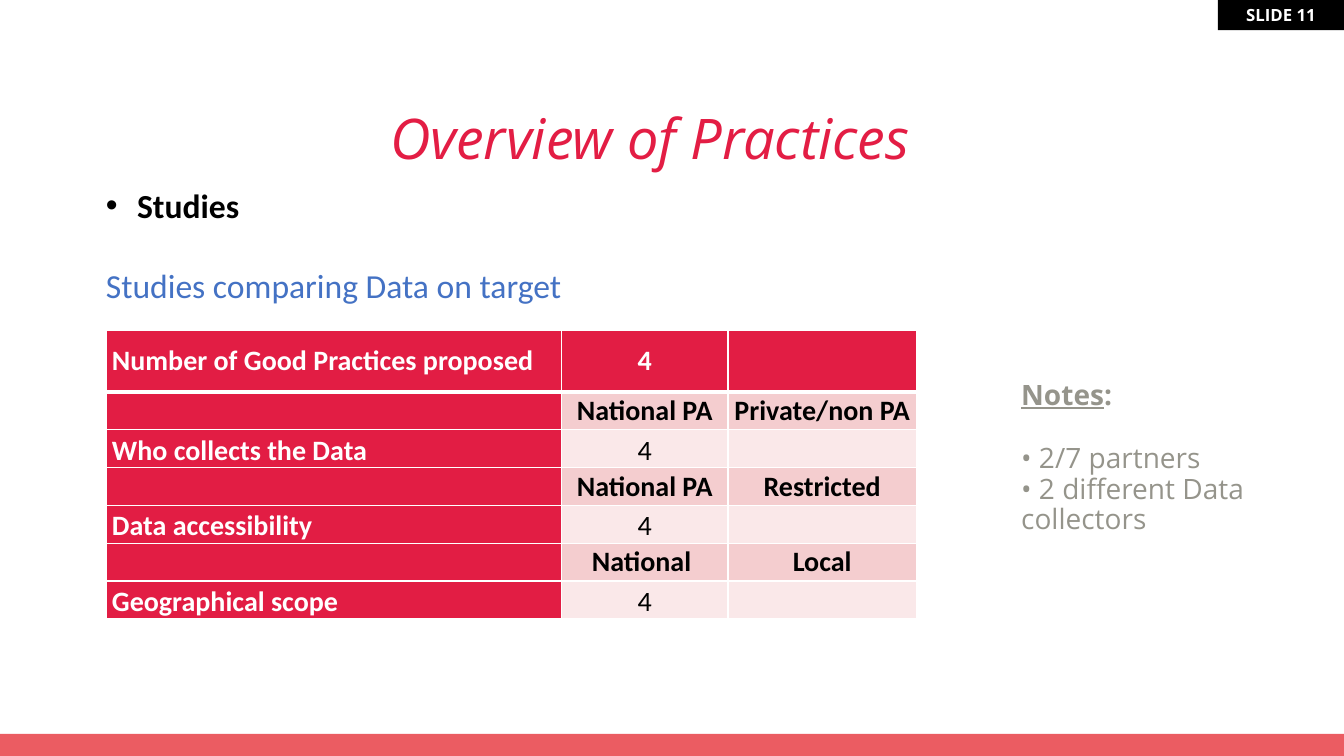
from lxml import etree
from pptx import Presentation
from pptx.dml.color import RGBColor
from pptx.enum.shapes import MSO_SHAPE
from pptx.enum.text import MSO_ANCHOR, MSO_AUTO_SIZE, PP_ALIGN
from pptx.oxml.ns import qn
from pptx.util import Inches, Pt

RECT = MSO_SHAPE.RECTANGLE
TOP, MID, LOW = MSO_ANCHOR.TOP, MSO_ANCHOR.MIDDLE, MSO_ANCHOR.BOTTOM
LEFT, CENTER = PP_ALIGN.LEFT, PP_ALIGN.CENTER
FIXED = MSO_AUTO_SIZE.NONE

COLORS = {"white": "FFFFFF", "black": "000000", "title": "E31D44",
          "red": "E21D44", "pink": "F4CDCF", "pale": "FAE8E9",
          "bar": "EB5C62", "blue": "4472C4", "gray": "95948B"}


def color(name):
    return RGBColor.from_string(COLORS[name])


def write(para, text, tint, align=LEFT, **form):
    run = para.add_run()
    run.text = text
    para.alignment = align
    run.font.color.rgb = color(tint)
    for key, value in form.items():
        setattr(run.font, key, value)


deck = Presentation()
deck.slide_width, deck.slide_height = Inches(13.33), Inches(7.5)
slide = deck.slides.add_slide(deck.slide_layouts[1])
shapes = slide.shapes

# Footer bar and slide number badge
bands = [((0, 7.28, 13.33, 0.22), "bar", ""),
         ((12.08, 0, 1.25, 0.3), "black", "SLIDE 11")]
for box, tint, text in bands:
    band = shapes.add_shape(RECT, *map(Inches, box))
    band.shadow.inherit = False
    band.fill.solid()
    band.fill.fore_color.rgb = color(tint)
    band.line.fill.background()
    if text:
        write(band.text_frame.paragraphs[0], text, "white", CENTER,
              name="Open Sans", size=Pt(12), bold=True)

# Text areas
title, body = shapes.title, slide.placeholders[1]
notes = shapes.add_textbox(0, 0, 0, 0)
areas = [(title, (0.95, 0.87, 10.99, 0.85), MID),
         (body, (0.95, 1.78, 10.34, 1.45), TOP),
         (notes, (10.03, 3.73, 2.89, 2.59), TOP)]
for area, box, anchor in areas:
    area.left, area.top, area.width, area.height = map(Inches, box)
    frame = area.text_frame
    frame.word_wrap = True
    frame.auto_size = FIXED
    frame.vertical_anchor = anchor

# Title
para = title.text_frame.paragraphs[0]
para.line_spacing = 1.2
write(para, "Overview of Practices", "title", CENTER,
      name="Open Sans", size=Pt(40), italic=True)

# Topic and table heading
topic = body.text_frame.paragraphs[0]
head = body.text_frame.add_paragraph()
for para, inset, mark in [(topic, 0.31, "•"), (head, 0, None)]:
    props = para._p.get_or_add_pPr()
    props.set("marL", str(Inches(inset)))
    props.set("indent", str(-Inches(inset)))
    if mark:
        etree.SubElement(props, qn("a:buChar"), char=mark)
    else:
        etree.SubElement(props, qn("a:buNone"))
topic.space_before = Pt(0)
head.space_before = Pt(29)
write(topic, "Studies", "black", name="Calibri", size=Pt(24), bold=True)
write(head, "Studies comparing Data on target", "blue",
      name="Calibri", size=Pt(24))

# Notes
gray = {"name": "Open Sans", "size": Pt(20)}
para = notes.text_frame.paragraphs[0]
para.line_spacing = 0.9
write(para, "Notes", "gray", bold=True, underline=True, **gray)
write(para, ":", "gray", bold=True, **gray)
for text, gap in [("• 2/7 partners", 24),
                  ("• 2 different Data collectors", 0)]:
    para = notes.text_frame.add_paragraph()
    para.line_spacing = 0.9
    para.space_before = Pt(gap)
    write(para, text, "gray", **gray)

# Practices table
ROWS = [("Number of Good Practices proposed", "4", ""),
        ("", "National PA", "Private/non PA"),
        ("Who collects the Data", "4", ""),
        ("", "National PA", "Restricted"),
        ("Data accessibility", "4", ""),
        ("", "National ", "Local"),
        ("Geographical scope", "4", "")]
table = shapes.add_table(len(ROWS), 3, Inches(1.06), Inches(3.28),
                         Inches(8.03), Inches(2.86)).table
for col, width in zip(table.columns, (4.51, 1.65, 1.87)):
    col.width = Inches(width)

for r, row in enumerate(ROWS):
    table.rows[r].height = Inches(0.375 if r else 0.61)
    value = r > 0 and r % 2 == 0
    for c, text in enumerate(row):
        cell = table.cell(r, c)
        cell.margin_left = cell.margin_right = Inches(0.05)
        cell.margin_top = cell.margin_bottom = 0
        cell.vertical_anchor = LOW if value else MID

        # White borders, thick under the header
        props = cell._tc.get_or_add_tcPr()
        for side in "LRTB":
            thick = (r, side) in [(0, "B"), (1, "T")]
            line = etree.SubElement(props, qn("a:ln" + side),
                                    w=str(Pt(3 if thick else 1)))
            fill = etree.SubElement(line, qn("a:solidFill"))
            etree.SubElement(fill, qn("a:srgbClr"), val=COLORS["white"])

        solid = r == 0 or c == 0
        cell.fill.solid()
        cell.fill.fore_color.rgb = color(
            "red" if solid else "pale" if value else "pink")
        if text:
            write(cell.text_frame.paragraphs[0], text,
                  "white" if solid else "black", CENTER if c else LEFT,
                  name="Calibri", size=Pt(20), bold=solid or not value)

deck.save("out.pptx")
